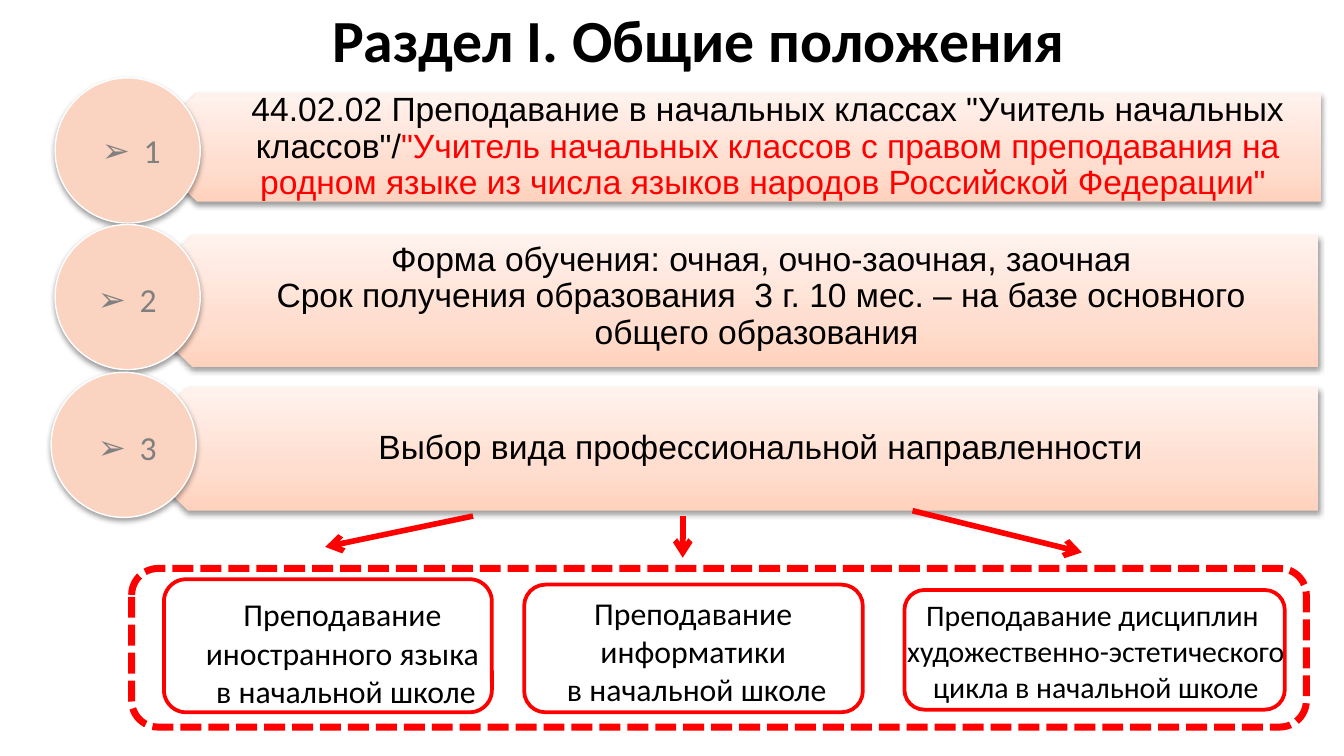
import pptx
import pptx.dml.color
import pptx.enum.dml
import pptx.enum.shapes
import pptx.enum.text
import pptx.oxml
import pptx.oxml.ns
import pptx.util
from pptx.util import Inches

RGBColor = pptx.dml.color.RGBColor
BLACK = RGBColor(0x00, 0x00, 0x00)
WHITE = RGBColor(0xFF, 0xFF, 0xFF)
RED = RGBColor(0xFF, 0x00, 0x00)
GRAY = RGBColor(0x80, 0x80, 0x80)
PEACH = RGBColor(0xFB, 0xD3, 0xC1)
BAR_STOPS = (
    (0, RGBColor(0xFF, 0xD2, 0xBD)),
    (35, RGBColor(0xFF, 0xDE, 0xD0)),
    (100, RGBColor(0xFF, 0xF2, 0xED)),
)

SHAPE = pptx.enum.shapes.MSO_SHAPE
ANCHOR = pptx.enum.text.MSO_ANCHOR
ALIGN = pptx.enum.text.PP_ALIGN
AUTO_SIZE = pptx.enum.text.MSO_AUTO_SIZE


def xml(markup):
    """Parse one DrawingML element whose root has no namespace declaration."""
    head, rest = markup.split(" ", 1)
    return pptx.oxml.parse_xml(f'{head} {pptx.oxml.ns.nsdecls("a")} {rest}')


class SectionSlide:
    def __init__(self, slide):
        self.shapes = slide.shapes
        self.body_font = "Arial"
        self.label_font = "Calibri"

    def text(self, text, box, *, size, font=None, color=BLACK, bold=False,
             align=ALIGN.CENTER, anchor=ANCHOR.TOP, insets=None, spacing=None,
             wrap=True, bullet=None, accent=""):
        """Add a text box; accent is a red run at the end of the last line."""
        textbox = self.shapes.add_textbox(*map(Inches, box))
        frame = textbox.text_frame
        frame.word_wrap = wrap
        frame.vertical_anchor = anchor
        frame.auto_size = AUTO_SIZE.NONE if wrap else AUTO_SIZE.SHAPE_TO_FIT_TEXT
        if insets:
            (frame.margin_left, frame.margin_top,
             frame.margin_right, frame.margin_bottom) = map(Inches, insets)
        for index, line in enumerate(text.split("\n")):
            paragraph = frame.paragraphs[0] if index == 0 else frame.add_paragraph()
            paragraph.alignment = align
            if spacing:
                paragraph.line_spacing = spacing
            if bullet:
                properties = paragraph._p.get_or_add_pPr()
                properties.set("marL", str(Inches(0.31)))
                properties.set("indent", str(-Inches(0.31)))
                properties.append(xml(f'<a:buFont typeface="{self.body_font}"/>'))
                properties.append(xml(f'<a:buChar char="{bullet}"/>'))
            paragraph.add_run().text = line
        if accent:
            frame.paragraphs[-1].add_run().text = accent
        for paragraph in frame.paragraphs:
            for run in paragraph.runs:
                run.font.name = font or self.body_font
                run.font.size = pptx.util.Pt(size)
                run.font.bold = bold
                run.font.color.rgb = RED if run.text == accent else color

    def shape(self, kind, box):
        shape = self.shapes.add_shape(kind, *map(Inches, box))
        shape.shadow.inherit = False
        return shape

    def cast_shadow(self, shape):
        shape._element.spPr.find(pptx.oxml.ns.qn("a:effectLst")).append(xml(
            '<a:outerShdw blurRad="40000" dist="20000" dir="5400000" rotWithShape="0">'
            '<a:srgbClr val="000000"><a:alpha val="38000"/></a:srgbClr></a:outerShdw>'))

    def bar(self, box):
        """Add a bar that points left and darkens towards its lower edge."""
        bar = self.shape(SHAPE.PENTAGON, box)
        bar.rotation = 180
        bar.line.fill.background()
        stops = "".join(
            f'<a:gs pos="{position * 1000}"><a:srgbClr val="{color}"/></a:gs>'
            for position, color in BAR_STOPS)
        geometry = bar._element.spPr.find(pptx.oxml.ns.qn("a:prstGeom"))
        geometry.addnext(xml(
            f'<a:gradFill rotWithShape="0"><a:gsLst>{stops}</a:gsLst>'
            '<a:lin ang="16200000" scaled="1"/></a:gradFill>'))
        self.cast_shadow(bar)

    def badge(self, left, top):
        badge = self.shape(SHAPE.OVAL, (left, top, 1.08, 1.08))
        badge.fill.solid()
        badge.fill.fore_color.rgb = PEACH
        badge.line.color.rgb = WHITE
        badge.line.width = pptx.util.Pt(0.75)
        self.cast_shadow(badge)

    def frame(self, box, width, dash=None):
        frame = self.shape(SHAPE.ROUNDED_RECTANGLE, box)
        frame.fill.background()
        frame.line.color.rgb = RED
        frame.line.width = pptx.util.Pt(width)
        if dash:
            frame.line.dash_style = dash

    def arrow(self, start, end):
        arrow = self.shapes.add_connector(
            pptx.enum.shapes.MSO_CONNECTOR.STRAIGHT, *map(Inches, start + end))
        arrow.line.color.rgb = RED
        arrow.line.width = pptx.util.Pt(3)
        arrow.line._get_or_add_ln().append(xml('<a:tailEnd type="arrow"/>'))
        arrow._element.spPr.append(xml("<a:effectLst />"))


def main():
    deck = pptx.Presentation()
    deck.slide_width = Inches(10)
    deck.slide_height = deck.slide_width * 9 // 16
    page = SectionSlide(deck.slides.add_slide(deck.slide_layouts[6]))

    page.text("Раздел I. Общие положения", (0.7, -0.18, 9, 0.94), size=32,
              font=page.label_font, bold=True, anchor=ANCHOR.MIDDLE)

    # bar left, text left, right edge, top, height, bottom inset, badge, provision, accent
    provisions = (
        (1.06, 1.26, 9.83, 0.69, 0.81, 0.07, (0.41, 0.58),
         '44.02.02 Преподавание в начальных классах "Учитель начальных классов"/',
         '"Учитель начальных классов с правом преподавания на родном языке '
         'из числа языков народов Российской Федерации" '),
        (0.94, 1.18, 9.81, 1.75, 0.98, 0.13, (0.41, 1.67),
         "Форма обучения: очная, очно-заочная, заочная\n"
         "Срок получения образования  3 г. 10 мес. – на базе основного "
         "общего образования ", ""),
        (0.94, 1.17, 9.81, 2.88, 0.92, 0.07, (0.38, 2.77),
         "Выбор вида профессиональной направленности", ""),
    )
    for (bar_left, text_left, right, top, height, bottom_inset,
         badge, provision, accent) in provisions:
        page.bar((bar_left, top, right - bar_left, height))
        page.text(provision, (text_left, top, right - text_left, height), size=18,
                  anchor=ANCHOR.MIDDLE, insets=(0.48, 0.07, 0.14, bottom_inset),
                  spacing=0.9, accent=accent)
        page.badge(*badge)

    page.frame((0.98, 4.23, 8.74, 1.18), 3.75, pptx.enum.dml.MSO_LINE.SQUARE_DOT)

    # frame, arrow start, arrow end, label box, size, label
    specializations = (
        ((1.22, 4.31, 2.44, 0.99), (3.52, 3.84), (2.42, 4.07),
         (1.42, 4.38, 2.31, 0.96), 17,
         "Преподавание \nиностранного языка \nв начальной школе"),
        ((3.9, 4.35, 2.52, 0.95), (5.08, 3.84), (5.08, 4.15),
         (4.11, 4.37, 2.15, 0.96), 17,
         "Преподавание \nинформатики \nв начальной школе"),
        ((6.73, 4.39, 2.83, 0.89), (6.79, 3.8), (8.05, 4.11),
         (6.58, 4.39, 3.1, 0.91), 16,
         "Преподавание дисциплин\n художественно-эстетического\n"
         " цикла в начальной школе"),
    )
    for outline, start, end, label_box, size, label in specializations:
        page.frame(outline, 2)
        page.arrow(start, end)
        page.text(label, label_box, size=size, font=page.label_font, wrap=False)

    number_places = ((0.66, 0.92), (0.63, 2.03), (0.63, 3.13))
    for number, place in enumerate(number_places, start=1):
        page.text(str(number), place + (0.65, 0.4), size=18, font=page.label_font,
                  color=GRAY, align=ALIGN.LEFT, wrap=False, bullet="➢")

    deck.save("out.pptx")


if __name__ == "__main__":
    main()
